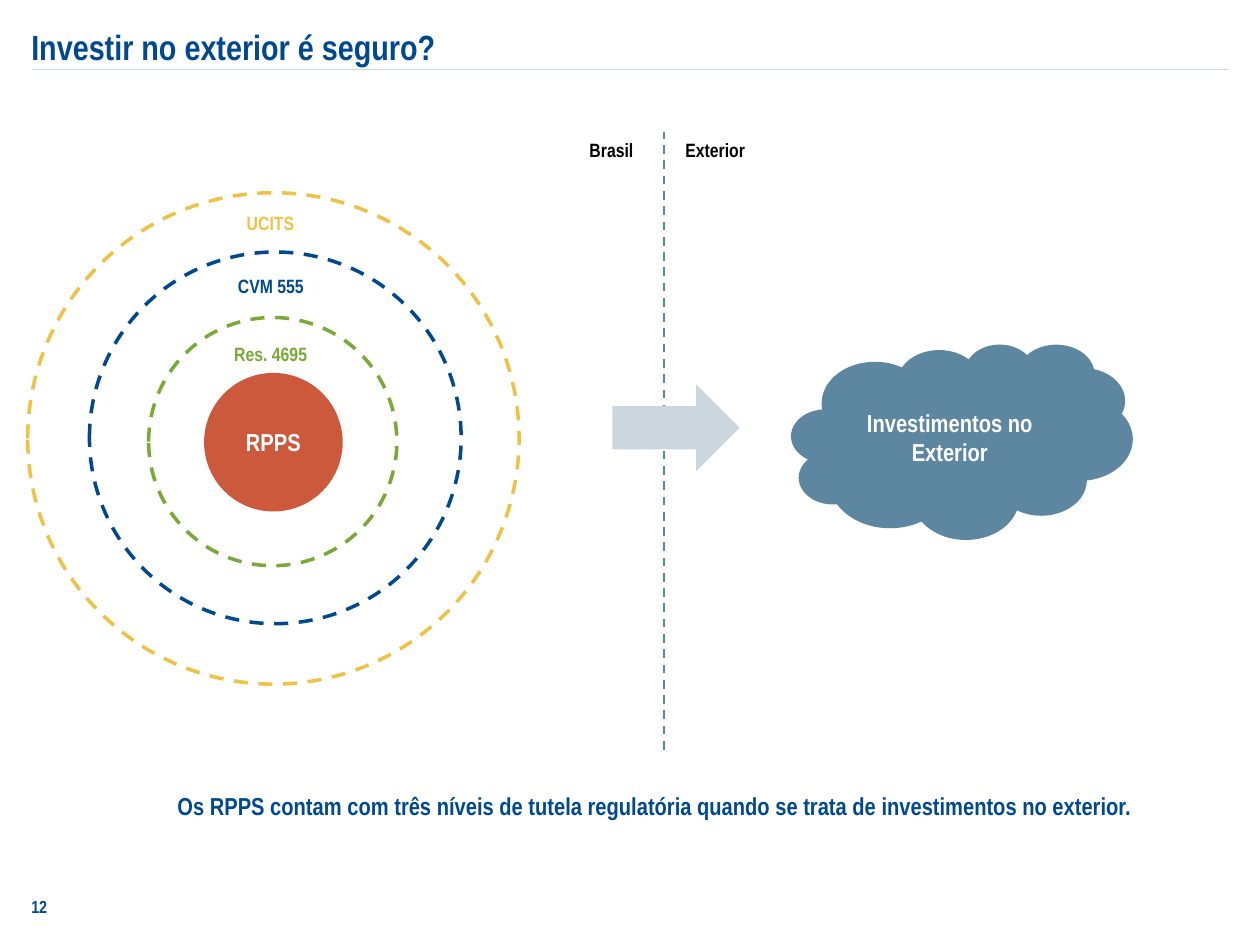
import pptx
import pptx.util
import pptx.dml.color
import pptx.enum.dml
import pptx.enum.shapes
import pptx.enum.text
import pptx.oxml
from pptx.util import Inches

RGBColor = pptx.dml.color.RGBColor
SHAPES = pptx.enum.shapes.MSO_SHAPE
DASH = pptx.enum.dml.MSO_LINE.DASH

NAVY = RGBColor(0x00, 0x49, 0x90)
STEEL = RGBColor(0x5D, 0x87, 0xA1)
MIST = RGBColor(0xCC, 0xD6, 0xDF)
RUST = RGBColor(0xCC, 0x59, 0x3C)
GREEN = RGBColor(0x79, 0xAA, 0x37)
GOLD = RGBColor(0xEF, 0xC2, 0x46)
BLACK = RGBColor(0x00, 0x00, 0x00)
WHITE = RGBColor(0xFF, 0xFF, 0xFF)

deck = pptx.Presentation()
deck.slide_width, deck.slide_height = Inches(10), Inches(7.5)
page = deck.slides.add_slide(deck.slide_layouts[6])


def write(shape, text, size, color):
    shape.text_frame.text = text
    font = shape.text_frame.paragraphs[0].runs[0].font
    font.name = "Arial Narrow"
    font.size = pptx.util.Pt(size)
    font.bold = True
    font.color.rgb = color


def add_shape(kind, left, top, width, height, fill=None):
    shape = page.shapes.add_shape(
        kind, Inches(left), Inches(top), Inches(width), Inches(height))
    shape.shadow.inherit = False
    shape.line.fill.background()
    if fill is None:
        shape.fill.background()
    else:
        shape.fill.solid()
        shape.fill.fore_color.rgb = fill
    return shape


# Title rule and dashed border between Brazil and abroad
for x1, y1, x2, y2, color, weight, dash in [
    (0.25, 0.55, 9.75, 0.55, MIST, 0.75, None),
    (5.27, 5.95, 5.27, 1.05, STEEL, 1.25, DASH),
]:
    line = page.shapes.add_connector(
        pptx.enum.shapes.MSO_CONNECTOR.STRAIGHT,
        Inches(x1), Inches(y1), Inches(x2), Inches(y2))
    line.line.color.rgb = color
    line.line.width = pptx.util.Pt(weight)
    line.line.dash_style = dash
    line._element.spPr.append(
        pptx.oxml.parse_xml(
            '<a:effectLst xmlns:a='
            '"http://schemas.openxmlformats.org/drawingml/2006/main"/>'))

# Core circle and cloud with centred labels
core = add_shape(SHAPES.OVAL, 1.62, 2.96, 1.1, 1.1, RUST)
cloud = add_shape(SHAPES.CLOUD, 6.28, 2.73, 2.71, 1.55, STEEL)
for shape, text in [(core, "RPPS"), (cloud, "Investimentos no Exterior")]:
    write(shape, text, 14, WHITE)
    frame = shape.text_frame
    frame.word_wrap = True
    frame.vertical_anchor = pptx.enum.text.MSO_ANCHOR.MIDDLE
    frame.margin_left = frame.margin_right = 0
    frame.margin_top = frame.margin_bottom = 0
    frame.paragraphs[0].alignment = pptx.enum.text.PP_ALIGN.CENTER

# Arrow crossing the border
arrow = add_shape(SHAPES.UP_ARROW, 5.02, 2.89, 0.69, 1.01, MIST)
arrow.rotation = 90

# Regulatory rings
for left, top, diameter, color in [
    (1.18, 2.52, 1.97, GREEN),
    (0.71, 2.0, 2.95, NAVY),
    (0.22, 1.53, 3.9, GOLD),
]:
    ring = add_shape(SHAPES.OVAL, left, top, diameter, diameter)
    ring.line.color.rgb = color
    ring.line.width = pptx.util.Pt(2)
    ring.line.dash_style = DASH

# Title, labels, conclusion and page number
for text, left, top, width, height, size, color, wrap in [
    ("Investir no exterior é seguro?", 0.15, 0.15, 9.6, 0.44, 20, NAVY, True),
    ("Brasil", 4.58, 1.05, 0.55, 0.29, 11, BLACK, False),
    ("Exterior", 5.34, 1.05, 0.68, 0.29, 11, BLACK, False),
    ("Res. 4695", 1.76, 2.67, 0.78, 0.29, 11, GREEN, False),
    ("CVM 555", 1.79, 2.13, 0.73, 0.29, 11, NAVY, False),
    ("UCITS", 1.86, 1.63, 0.58, 0.29, 11, GOLD, False),
    ("Os RPPS contam com três níveis de tutela regulatória quando se trata "
     "de investimentos no exterior.", 1.31, 6.23, 7.95, 0.34, 14, NAVY, False),
    ("12", 0.15, 7.06, 0.46, 0.27, 10, NAVY, True),
]:
    box = page.shapes.add_textbox(
        Inches(left), Inches(top), Inches(width), Inches(height))
    box.text_frame.word_wrap = wrap
    write(box, text, size, color)

deck.save("out.pptx")
